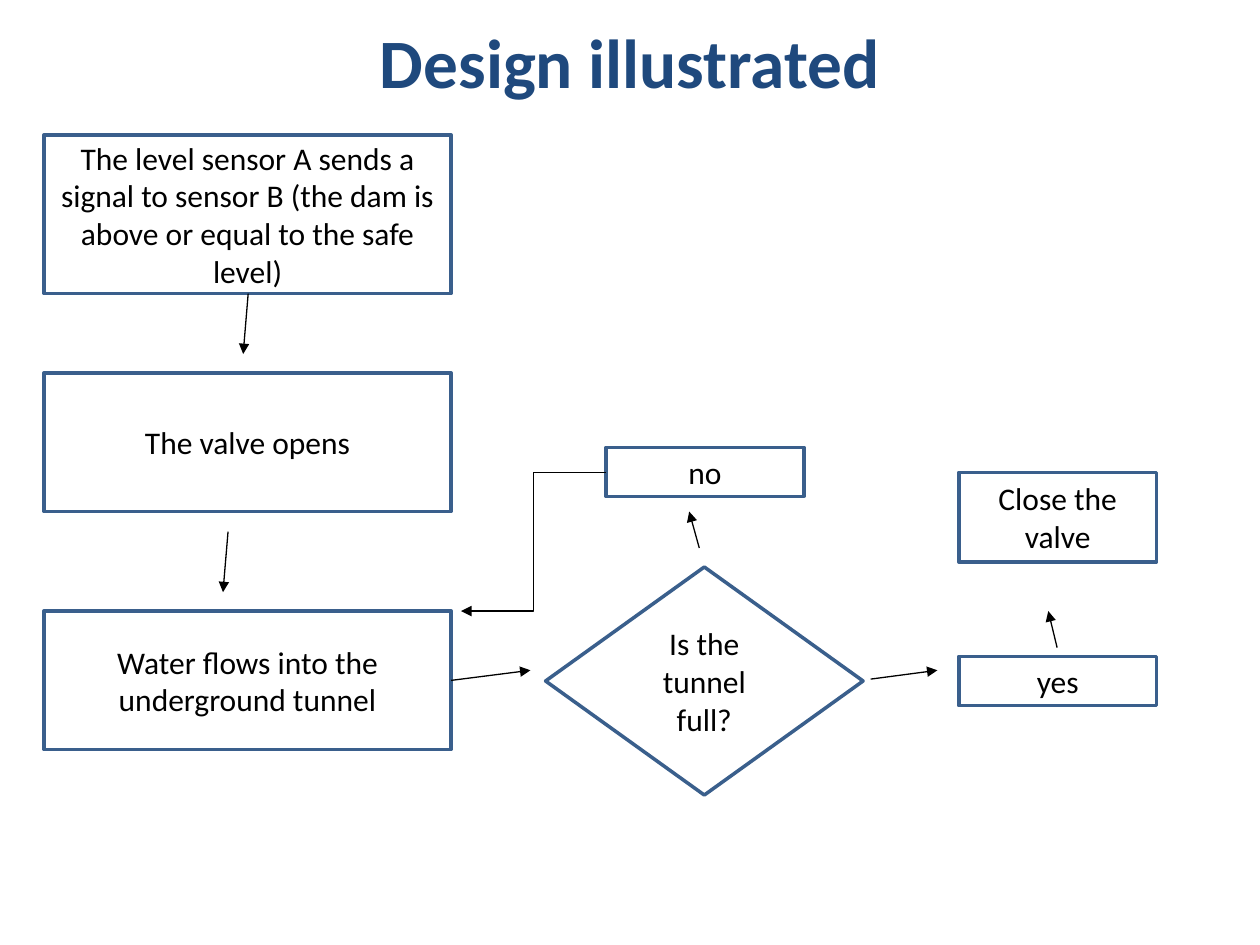
from lxml import etree
from pptx import Presentation
from pptx import util as u
from pptx.dml import color
from pptx.enum import shapes, text
from pptx.oxml import ns

FONT = "Calibri"
BLACK, NAVY, STEEL = "000000", "1F497D", "3A5F8C"
RECTANGLE = shapes.MSO_SHAPE.RECTANGLE
STRAIGHT = shapes.MSO_CONNECTOR.STRAIGHT


def rgb(value):
    """Turn a hex string into a colour."""
    return color.RGBColor.from_string(value)


def write(frame, wording, size, hex_color, bold=False):
    """Write one centred run into a text frame."""
    frame.word_wrap = True
    frame.auto_size = text.MSO_AUTO_SIZE.NONE
    frame.vertical_anchor = text.MSO_ANCHOR.MIDDLE
    paragraph = frame.paragraphs[0]
    paragraph.alignment = text.PP_ALIGN.CENTER
    run = paragraph.add_run()
    run.text = wording
    run.font.name = FONT
    run.font.size = u.Pt(size)
    run.font.bold = bold
    run.font.color.rgb = rgb(hex_color)


def add_node(slide, origin, offset, size, wording, kind=RECTANGLE):
    """Add an outlined flowchart node at an offset from its region's origin."""
    left, top = (u.Inches(a + b) for a, b in zip(origin, offset))
    shape = slide.shapes.add_shape(kind, left, top, *map(u.Inches, size))
    shape.shadow.inherit = False
    shape.fill.background()
    shape.line.color.rgb = rgb(STEEL)
    shape.line.width = u.Pt(2)
    write(shape.text_frame, wording, 18, BLACK)


def add_arrow(slide, origin, start, end, kind=STRAIGHT):
    """Add an arrow between two offsets from its region's origin."""
    points = [u.Inches(a + b) for point in (start, end) for a, b in zip(origin, point)]
    connector = slide.shapes.add_connector(kind, *points)
    connector.line.color.rgb = rgb(BLACK)
    connector.line.width = u.Pt(0.75)
    line = connector.line._get_or_add_ln()
    etree.SubElement(line, ns.qn("a:tailEnd"), type="triangle")
    etree.SubElement(connector._element.spPr, ns.qn("a:effectLst"))


def add_title(slide, left, top, width, height):
    """Place and format the title placeholder."""
    title = slide.shapes.title
    title.left, title.top = u.Inches(left), u.Inches(top)
    title.width, title.height = u.Inches(width), u.Inches(height)
    write(title.text_frame, "Design illustrated", 39.6, NAVY, bold=True)


def add_steps(slide, left, top, width):
    """Stack the three process steps with arrows between them."""
    origin, pitch = (left, top), 1.89
    steps = [
        ("The level sensor A sends a signal to sensor B "
         "(the dam is above or equal to the safe level)", 1.26),
        ("The valve opens", 1.1),
        ("Water flows into the underground tunnel", 1.1),
    ]
    for index, (wording, height) in enumerate(steps):
        add_node(slide, origin, (0, index * pitch), (width, height), wording)
    for index, x in enumerate((1.62, 1.46)):
        y = 1.26 + index * pitch
        add_arrow(slide, origin, (x, y), (x - 0.04, y + 0.48))


def add_decision(slide, left, top):
    """Add the tunnel question with its way in and the loop back for no."""
    origin = (left, top)
    add_node(slide, origin, (0.75, 0.95), (2.52, 1.81), "Is the tunnel full?",
             shapes.MSO_SHAPE.DIAMOND)
    add_node(slide, origin, (1.23, 0), (1.57, 0.39), "no")
    add_arrow(slide, origin, (0, 1.85), (0.63, 1.77))
    add_arrow(slide, origin, (1.97, 0.8), (1.89, 0.51))
    add_arrow(slide, origin, (1.23, 0.2), (0.08, 1.3), shapes.MSO_CONNECTOR.ELBOW)


def add_outcome(slide, left, top):
    """Add the yes branch that leads up to closing the valve."""
    origin = (left, top)
    add_node(slide, origin, (0.7, 1.46), (1.57, 0.39), "yes")
    add_node(slide, origin, (0.7, 0), (1.57, 0.71), "Close the valve")
    add_arrow(slide, origin, (0, 1.64), (0.53, 1.57))
    add_arrow(slide, origin, (1.48, 1.39), (1.41, 1.1))


def main():
    """Build and save the flowchart slide."""
    presentation = Presentation()
    presentation.slide_width = u.Inches(10)
    presentation.slide_height = u.Inches(7.5)
    slide = presentation.slides.add_slide(presentation.slide_layouts[5])
    add_title(slide, 0.5, 0.21, 9, 0.55)
    add_steps(slide, 0.35, 1.07, 3.23)
    add_decision(slide, 3.58, 3.55)
    add_outcome(slide, 6.91, 3.75)
    presentation.save("out.pptx")


if __name__ == "__main__":
    main()
